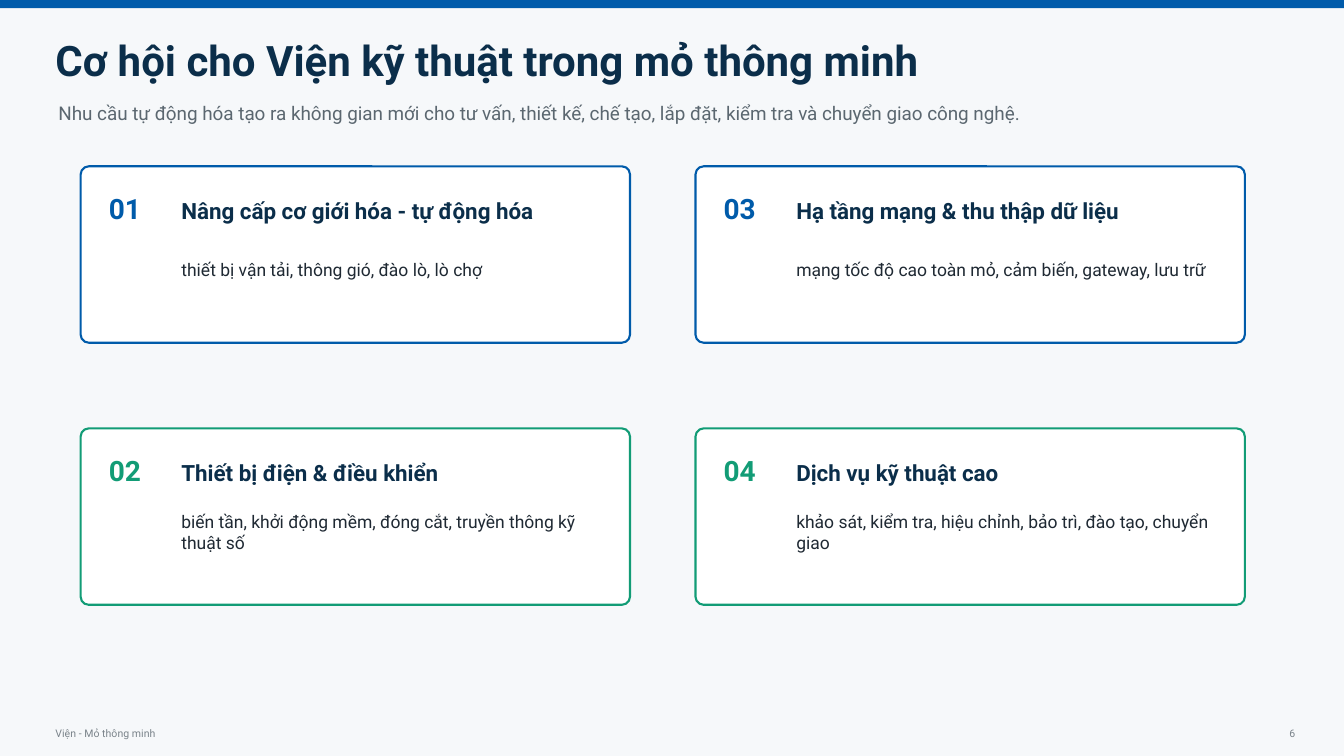
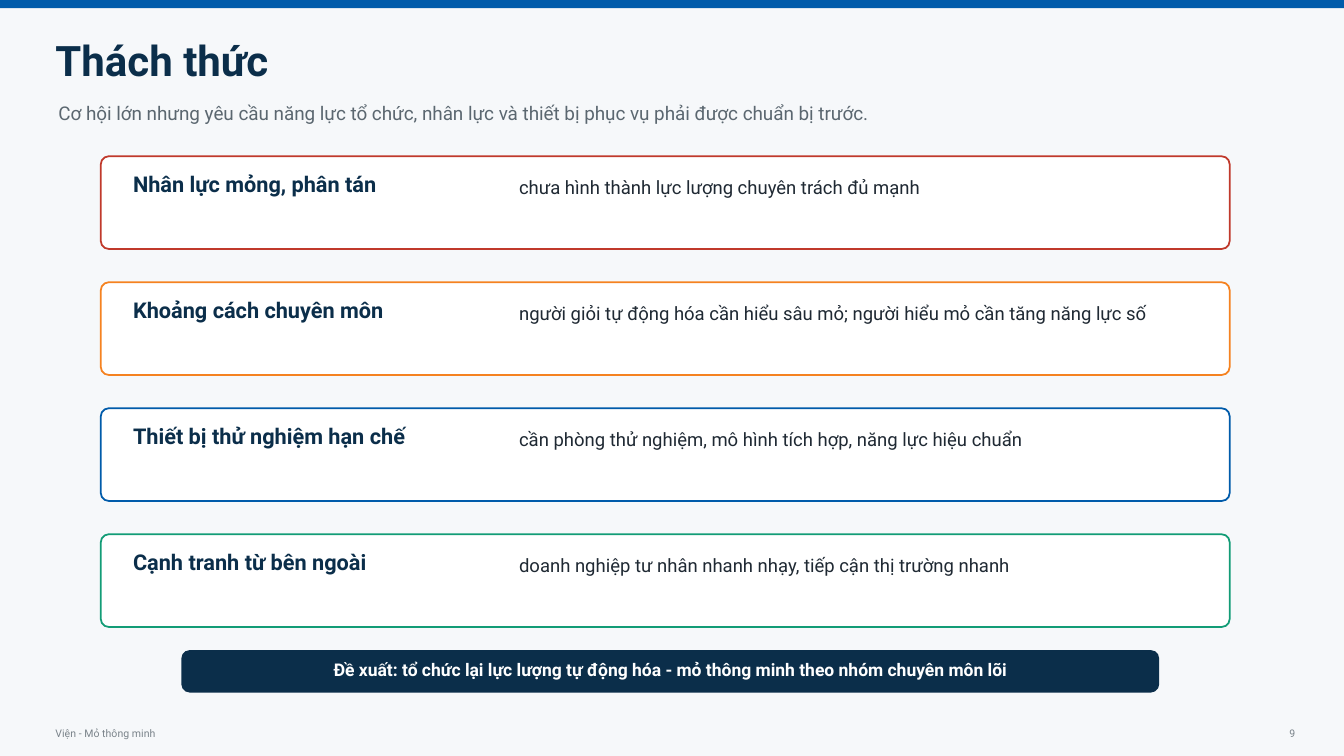
from dataclasses import dataclass

from pptx import Presentation
from pptx.dml.color import RGBColor
from pptx.enum.shapes import MSO_SHAPE as Kind
from pptx.enum.text import MSO_ANCHOR as Anchor, MSO_AUTO_SIZE as Fit, PP_ALIGN as Align
from pptx.shapes.autoshape import Shape
from pptx.slide import Slide
from pptx.util import Pt

FONT = "Roboto"
WIDE, HIGH = 960, 540
ROUND = 5.8

PAPER, WHITE = "F6F8FA", "FFFFFF"
NAVY, BLUE, GREEN = "0B2E4A", "005BAA", "129C76"
RED, ORANGE = "C0392B", "F58220"
INK, GREY, PALE = "1F2933", "5B6770", "7A838A"


@dataclass(frozen=True)
class Box:
    """A rectangle in points."""

    left: float
    top: float
    width: float
    height: float

    def inner(self, right: float, down: float, width: float, height: float) -> "Box":
        """Return a box offset from this one's top left corner."""
        return Box(self.left + right, self.top + down, width, height)


@dataclass(frozen=True)
class Style:
    """The look of a text."""

    size: float
    color: str
    bold: bool = False
    align: Align = Align.LEFT


@dataclass(frozen=True)
class Item:
    """A heading with its detail and accent colour."""

    head: str
    body: str
    color: str


TITLE = Style(30, NAVY, True)
LEAD = Style(13.5, GREY)
FOOT = Style(7.5, PALE)
PAGE = Style(7.5, PALE, align=Align.RIGHT)
CARD_HEAD, CARD_BODY = Style(16, NAVY, True), Style(12.5, INK)
ROW_HEAD, ROW_BODY = Style(15.5, NAVY, True), Style(13.2, INK)
CALL = Style(12.5, WHITE, True, Align.CENTER)

CARDS = [
    Item("Nâng cấp cơ giới hóa - tự động hóa", "thiết bị vận tải, thông gió, đào lò, lò chợ", BLUE),
    Item("Thiết bị điện & điều khiển", "biến tần, khởi động mềm, đóng cắt, truyền thông kỹ thuật số", GREEN),
    Item("Hạ tầng mạng & thu thập dữ liệu", "mạng tốc độ cao toàn mỏ, cảm biến, gateway, lưu trữ", BLUE),
    Item("Dịch vụ kỹ thuật cao", "khảo sát, kiểm tra, hiệu chỉnh, bảo trì, đào tạo, chuyển giao", GREEN),
]
ROWS = [
    Item("Nhân lực mỏng, phân tán", "chưa hình thành lực lượng chuyên trách đủ mạnh", RED),
    Item("Khoảng cách chuyên môn", "người giỏi tự động hóa cần hiểu sâu mỏ; người hiểu mỏ cần tăng năng lực số", ORANGE),
    Item("Thiết bị thử nghiệm hạn chế", "cần phòng thử nghiệm, mô hình tích hợp, năng lực hiệu chuẩn", BLUE),
    Item("Cạnh tranh từ bên ngoài", "doanh nghiệp tư nhân nhanh nhạy, tiếp cận thị trường nhanh", GREEN),
]


def paint(code: str) -> RGBColor:
    """Turn a hex string into a colour."""
    return RGBColor.from_string(code)


def span(box: Box) -> tuple[Pt, Pt, Pt, Pt]:
    """Return the box as lengths."""
    return Pt(box.left), Pt(box.top), Pt(box.width), Pt(box.height)


def write(shape: Shape, text: str, style: Style) -> None:
    """Fill a shape with one styled paragraph."""
    frame = shape.text_frame
    frame.text = text
    frame.auto_size = Fit.NONE
    frame.word_wrap = True
    frame.vertical_anchor = Anchor.MIDDLE
    frame.margin_left = frame.margin_right = frame.margin_top = frame.margin_bottom = 0
    para = frame.paragraphs[0]
    para.alignment = style.align
    font = para.font
    font.name, font.size, font.bold = FONT, Pt(style.size), style.bold
    font.color.rgb = paint(style.color)


def label(slide: Slide, box: Box, text: str, style: Style) -> None:
    """Add a text box."""
    write(slide.shapes.add_textbox(*span(box)), text, style)


def panel(slide: Slide, box: Box, fill: str, line: str = "", weight: float = 0, kind: Kind = Kind.ROUNDED_RECTANGLE) -> Shape:
    """Add a filled shape, outlined if a line colour is given."""
    shape = slide.shapes.add_shape(kind, *span(box))
    shape.shadow.inherit = False
    shape.fill.solid()
    shape.fill.fore_color.rgb = paint(fill)
    if kind == Kind.ROUNDED_RECTANGLE:
        shape.adjustments[0] = ROUND / box.height
    if line:
        shape.line.color.rgb = paint(line)
        shape.line.width = Pt(weight)
    else:
        shape.line.fill.background()
    return shape


def start(deck: Presentation, title: str, lead: str, page: int) -> Slide:
    """Add a slide with its band, title, lead and footer."""
    slide = deck.slides.add_slide(deck.slide_layouts[5])
    panel(slide, Box(0, 0, WIDE, 5.76), BLUE, kind=Kind.RECTANGLE)
    head = slide.shapes.title
    head.left, head.top, head.width, head.height = span(Box(39.6, 23.04, 871.2, 39.6))
    write(head, title, TITLE)
    label(slide, Box(41.76, 68.4, 864, 25.2), lead, LEAD)
    label(slide, Box(39.6, 516.96, 244.8, 12.96), "Viện - Mỏ thông minh", FOOT)
    label(slide, Box(903.6, 516.96, 21.6, 12.96), str(page), PAGE)
    return slide


def card(slide: Slide, box: Box, rank: int, item: Item) -> None:
    """Draw a numbered card."""
    panel(slide, box, WHITE, item.color, 1.5)
    label(slide, box.inner(20.16, 20.16, 43.2, 20.16), f"{rank:02d}", Style(20, item.color, True))
    label(slide, box.inner(72, 21.6, 295.2, 20.16), item.head, CARD_HEAD)
    label(slide, box.inner(72, 57.6, 295.2, 32.4), item.body, CARD_BODY)


def row(slide: Slide, box: Box, item: Item) -> None:
    """Draw a wide row with heading and detail."""
    panel(slide, box, WHITE, item.color, 1.25)
    label(slide, box.inner(23.04, 10.8, 252, 17.28), item.head, ROW_HEAD)
    label(slide, box.inner(298.8, 12.24, 475.2, 20.16), item.body, ROW_BODY)


def chances(deck: Presentation) -> None:
    """Build the slide of opportunities."""
    slide = start(
        deck,
        "Cơ hội cho Viện kỹ thuật trong mỏ thông minh",
        "Nhu cầu tự động hóa tạo ra không gian mới cho tư vấn, thiết kế, chế tạo, lắp đặt, kiểm tra và chuyển giao công nghệ.",
        6,
    )
    for spot, item in enumerate(CARDS):
        col, line = divmod(spot, 2)
        card(slide, Box(57.6 + col * 439.2, 118.8 + line * 187.2, 392.4, 126), spot + 1, item)


def hurdles(deck: Presentation) -> None:
    """Build the slide of challenges."""
    slide = start(
        deck,
        "Thách thức",
        "Cơ hội lớn nhưng yêu cầu năng lực tổ chức, nhân lực và thiết bị phục vụ phải được chuẩn bị trước.",
        9,
    )
    for spot, item in enumerate(ROWS):
        row(slide, Box(72, 111.6 + spot * 90, 806.4, 66.24), item)
    call = panel(slide, Box(129.6, 464.4, 698.4, 30.24), NAVY)
    write(call, "Đề xuất: tổ chức lại lực lượng tự động hóa - mỏ thông minh theo nhóm chuyên môn lõi", CALL)
    call.text_frame.margin_bottom = Pt(2.88)


def main() -> None:
    """Build and save the deck."""
    deck = Presentation()
    deck.slide_width, deck.slide_height = Pt(WIDE), Pt(HIGH)
    back = deck.slide_master.background.fill
    back.solid()
    back.fore_color.rgb = paint(PAPER)
    chances(deck)
    hurdles(deck)
    deck.save("out.pptx")


if __name__ == "__main__":
    main()
